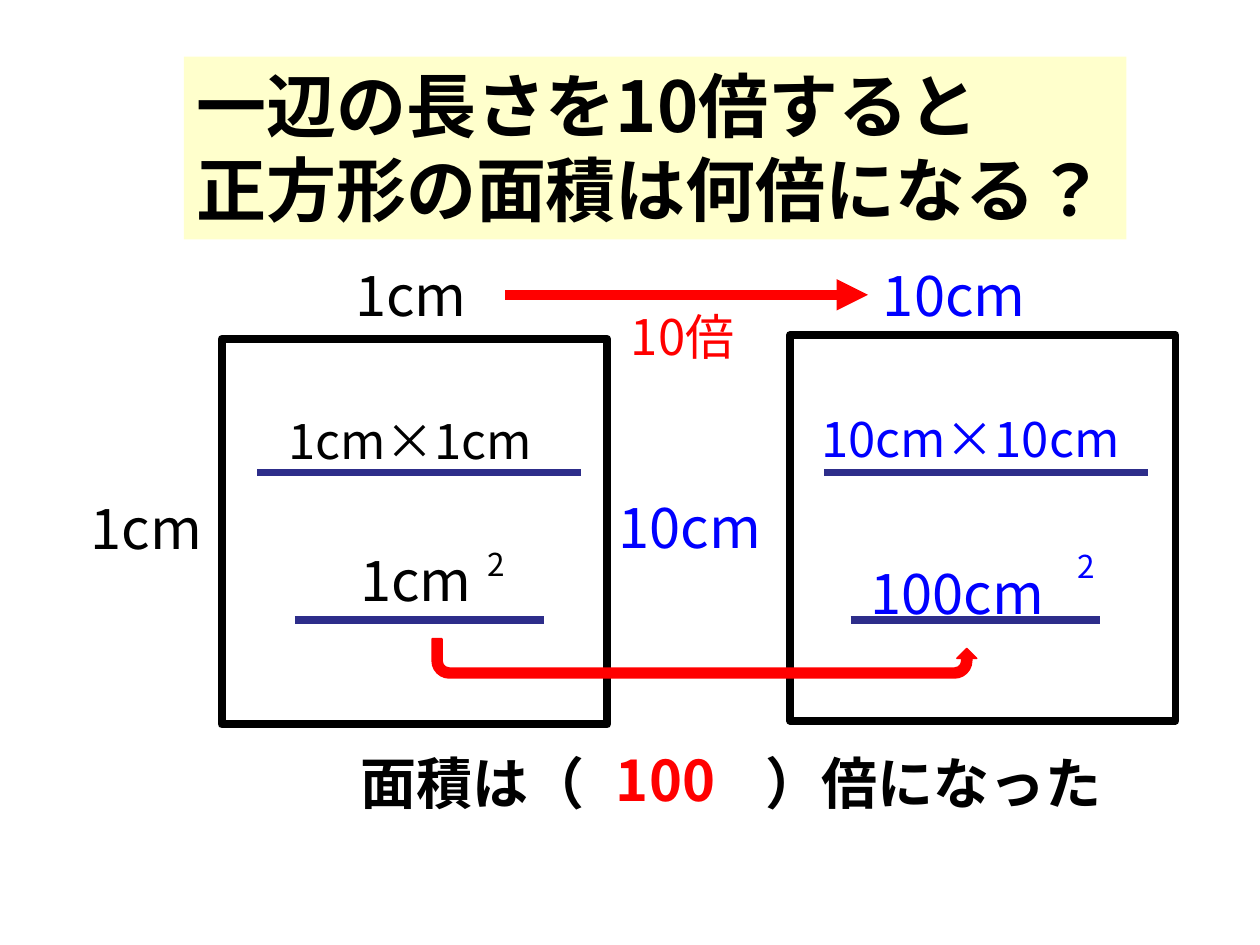
from typing import NamedTuple

from lxml.etree import SubElement
from pptx import Presentation
from pptx.dml.color import RGBColor
from pptx.enum.lang import MSO_LANGUAGE_ID
from pptx.enum.shapes import MSO_CONNECTOR, MSO_SHAPE
from pptx.oxml.ns import qn
from pptx.util import Inches, Pt

FONT = "Noto Sans CJK JP"
BLACK = RGBColor(0x00, 0x00, 0x00)
BLUE = RGBColor(0x00, 0x00, 0xFF)
RED = RGBColor(0xFF, 0x00, 0x00)
NAVY = RGBColor(0x2D, 0x2D, 0x8A)
CREAM = RGBColor(0xFF, 0xFF, 0xCC)


class Label(NamedTuple):
    text: str
    left: float
    top: float
    width: float
    height: float = 0.64
    size: int = 32
    color: RGBColor = BLACK
    bold: bool = False


class Square(NamedTuple):
    left: float
    top: float


class Rule(NamedTuple):
    left: float
    top: float
    length: float


SIDE = 3.06
SQUARES = [Square(6.27, 2.66), Square(1.76, 2.69)]
RULES = [
    Rule(left, top, length)
    for top, length, lefts in [(3.75, 2.57, (2.04, 6.54)), (4.92, 1.98, (2.34, 6.75))]
    for left in lefts
]
TITLE = Label("一辺の長さを10倍すると　正方形の面積は何倍になる？", 1.46, 0.45, 7.48, 1.45, 40, bold=True)
CONCLUSION = Label("面積は（\t）倍になった", 2.76, 5.89, 6.18, bold=True)
LABELS = [
    Label("100", 4.79, 5.87, 1.32, color=RED, bold=True),
    Label("1cm", 2.72, 2.02, 1.3),
    Label("1cm", 0.62, 3.87, 1.3),
    Label("1cm×1cm", 2.19, 3.21, 2.4, 0.57, 28),
    Label("1cm", 2.76, 4.28, 1.32),
    Label("2", 3.77, 4.28, 0.56, 0.4, 18),
    Label("10cm", 6.91, 2.02, 1.7, color=BLUE),
    Label("10cm", 4.81, 3.86, 1.6, color=BLUE),
    Label("10cm×10cm", 6.42, 3.19, 3.06, 0.57, 28, BLUE),
    Label("100cm", 6.81, 4.38, 1.93, color=BLUE),
    Label("2", 8.45, 4.29, 0.59, 0.4, 18, BLUE),
    Label("10倍", 4.91, 2.38, 1.3, 0.57, 28, RED),
]


def add_text(page, text: str, *, left: float, top: float, width: float, height: float,
             size: int, color: RGBColor, bold: bool):
    box = page.shapes.add_textbox(Inches(left), Inches(top), Inches(width), Inches(height))
    box.text_frame.word_wrap = True
    span = box.text_frame.paragraphs[0].add_run()
    span.text = text
    span.font.name = FONT
    span.font.size = Pt(size)
    span.font.bold = bold
    span.font.color.rgb = color
    span.font.language_id = MSO_LANGUAGE_ID.JAPANESE
    SubElement(span.font._element, qn("a:ea"), typeface=FONT)
    return box


def add_label(page, label: Label):
    return add_text(page, **label._asdict())


def add_tab_stop(box, position: float) -> None:
    properties = box.text_frame.paragraphs[0]._p.get_or_add_pPr()
    stops = SubElement(properties, qn("a:tabLst"))
    SubElement(stops, qn("a:tab"), pos=str(Inches(position)), algn="l")


def add_square(page, square: Square) -> None:
    box = page.shapes.add_shape(MSO_SHAPE.RECTANGLE, Inches(square.left), Inches(square.top),
                                Inches(SIDE), Inches(SIDE))
    box.shadow.inherit = False
    box.fill.background()
    box.line.color.rgb = BLACK
    box.line.width = Pt(4.5)


def add_rule(page, rule: Rule, color: RGBColor = NAVY, weight: float = 4.5):
    line = page.shapes.add_connector(MSO_CONNECTOR.STRAIGHT, Inches(rule.left), Inches(rule.top),
                                     Inches(rule.left + rule.length), Inches(rule.top))
    line.line.color.rgb = color
    line.line.width = Pt(weight)
    SubElement(line._element.spPr, qn("a:effectLst"))
    return line


def add_length_arrow(page) -> None:
    arrow = add_rule(page, Rule(4.01, 2.34, 2.88), RED, 6)
    SubElement(arrow.line._get_or_add_ln(), qn("a:tailEnd"), type="triangle")


def add_area_arrow(page) -> None:
    arrow = page.shapes.add_shape(MSO_SHAPE.U_TURN_ARROW, Inches(3.43), Inches(5.07),
                                  Inches(4.32), Inches(0.31))
    arrow.shadow.inherit = False
    arrow.rotation = 180
    arrow._element.spPr.xfrm.set("flipH", "1")
    arrow.fill.solid()
    arrow.fill.fore_color.rgb = RED
    arrow.line.color.rgb = RED
    arrow.line.width = Pt(1)


def main() -> None:
    deck = Presentation()
    deck.slide_width, deck.slide_height = Inches(10), Inches(7.5)
    page = deck.slides.add_slide(deck.slide_layouts[6])

    title = add_label(page, TITLE)
    title.fill.solid()
    title.fill.fore_color.rgb = CREAM
    for square in SQUARES:
        add_square(page, square)
    add_tab_stop(add_label(page, CONCLUSION), 3.22)
    for label in LABELS:
        add_label(page, label)
    add_length_arrow(page)
    for rule in RULES:
        add_rule(page, rule)
    add_area_arrow(page)

    deck.save("out.pptx")


if __name__ == "__main__":
    main()
